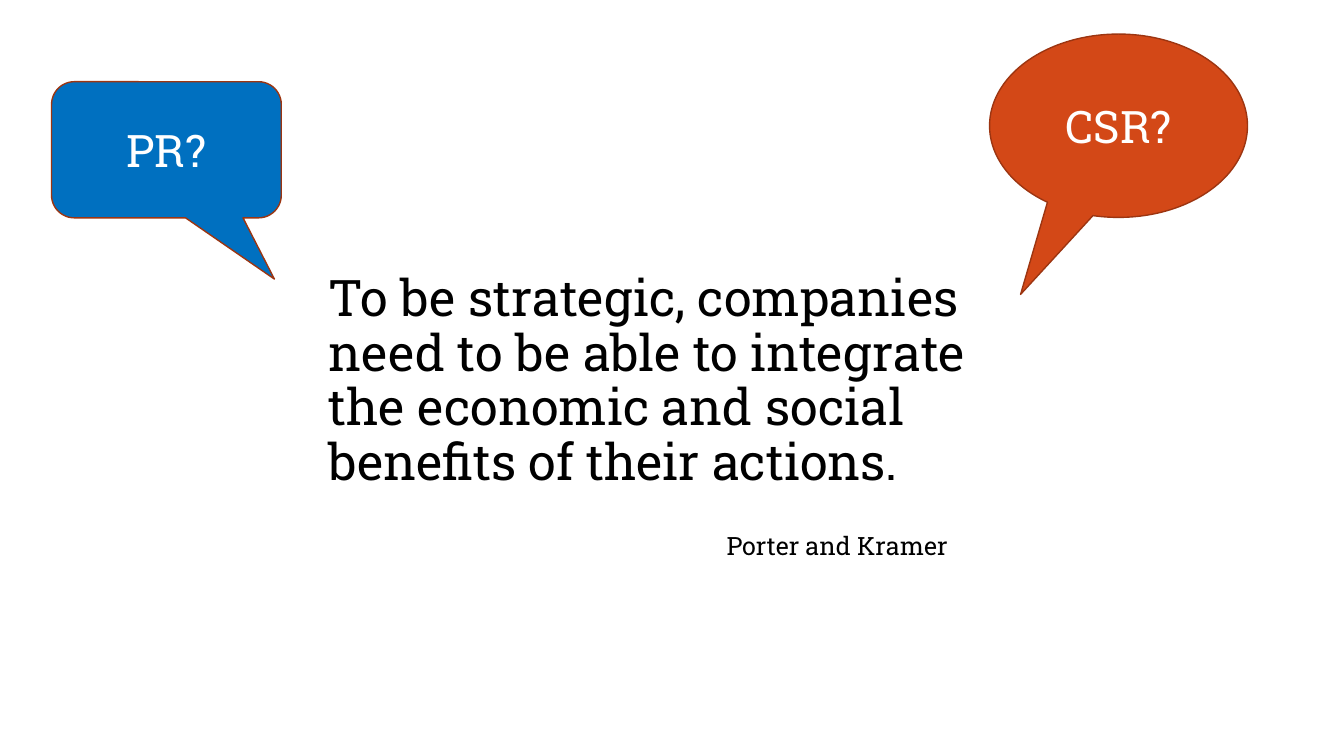
import pptx
import pptx.dml.color
import pptx.enum.shapes
import pptx.enum.text
import pptx.util
from pptx.util import Cm

FONT = "Roboto Slab"


def colour(value):
    """Return the colour for a hex string."""
    return pptx.dml.color.RGBColor.from_string(value)


def format_run(paragraph, size, text_colour):
    """Format the only run of a paragraph."""
    font = paragraph.runs[0].font
    font.name = FONT
    font.size = pptx.util.Pt(size)
    font.color.rgb = colour(text_colour)


def place(shape, left, top, width, height):
    """Move and size a shape, with lengths in centimetres."""
    shape.left, shape.top = Cm(left), Cm(top)
    shape.width, shape.height = Cm(width), Cm(height)


def add_quote(slide, text):
    """Put the quotation in the body placeholder without a bullet."""
    body = slide.placeholders[1]
    place(body, 8.03, 6.76, 18.39, 7.72)
    frame = body.text_frame
    frame.text = text
    frame.auto_size = pptx.enum.text.MSO_AUTO_SIZE.NONE
    paragraph = frame.paragraphs[0]
    properties = paragraph._p.get_or_add_pPr()
    properties.set("marL", "0")
    properties.set("indent", "0")
    pptx.oxml.xmlchemy.OxmlElement("a:buNone")
    properties.append(pptx.oxml.xmlchemy.OxmlElement("a:buNone"))
    paragraph.line_spacing = 0.9
    paragraph.space_before = pptx.util.Pt(0)
    format_run(paragraph, 36, "000000")


def add_attribution(slide, text):
    """Add the names of the authors under the quotation."""
    box = slide.shapes.add_textbox(Cm(18.06), Cm(13.23), Cm(6.35), Cm(1.02))
    box.text_frame.text = text
    box.text_frame.word_wrap = False
    format_run(box.text_frame.paragraphs[0], 18, "000000")


def add_callout(slide, kind, text, bounds, tail, fill):
    """Add a speech bubble whose tail ends at the given adjustments."""
    left, top, width, height = bounds
    callout = slide.shapes.add_shape(
        kind, Cm(left), Cm(top), Cm(width), Cm(height))
    callout.adjustments[0], callout.adjustments[1] = tail
    callout.shadow.inherit = False
    callout.fill.solid()
    callout.fill.fore_color.rgb = colour(fill)
    callout.line.color.rgb = colour("9C3511")
    callout.line.width = pptx.util.Pt(1)
    frame = callout.text_frame
    frame.text = text
    frame.vertical_anchor = pptx.enum.text.MSO_ANCHOR.MIDDLE
    frame.paragraphs[0].alignment = pptx.enum.text.PP_ALIGN.CENTER
    format_run(frame.paragraphs[0], 32, "FFFFFF")


def main():
    """Build the slide and save it."""
    presentation = pptx.Presentation()
    presentation.slide_width = Cm(33.87)
    presentation.slide_height = Cm(19.05)
    slide = presentation.slides.add_slide(presentation.slide_layouts[1])
    title = slide.shapes.title
    title._element.getparent().remove(title._element)
    add_quote(slide, "To be strategic, companies need to be able to integrate "
                     "the economic and social benefits of their actions.")
    add_attribution(slide, "Porter and Kramer")
    kinds = pptx.enum.shapes.MSO_SHAPE
    add_callout(slide, kinds.OVAL_CALLOUT, "CSR?",
                (24.94, 0.86, 6.5, 4.62), (-0.38, 0.92), "D34817")
    add_callout(slide, kinds.ROUNDED_RECTANGULAR_CALLOUT, "PR?",
                (1.3, 2.06, 5.79, 3.43), (0.47, 0.95), "0070C0")
    presentation.save("out.pptx")


if __name__ == "__main__":
    main()
